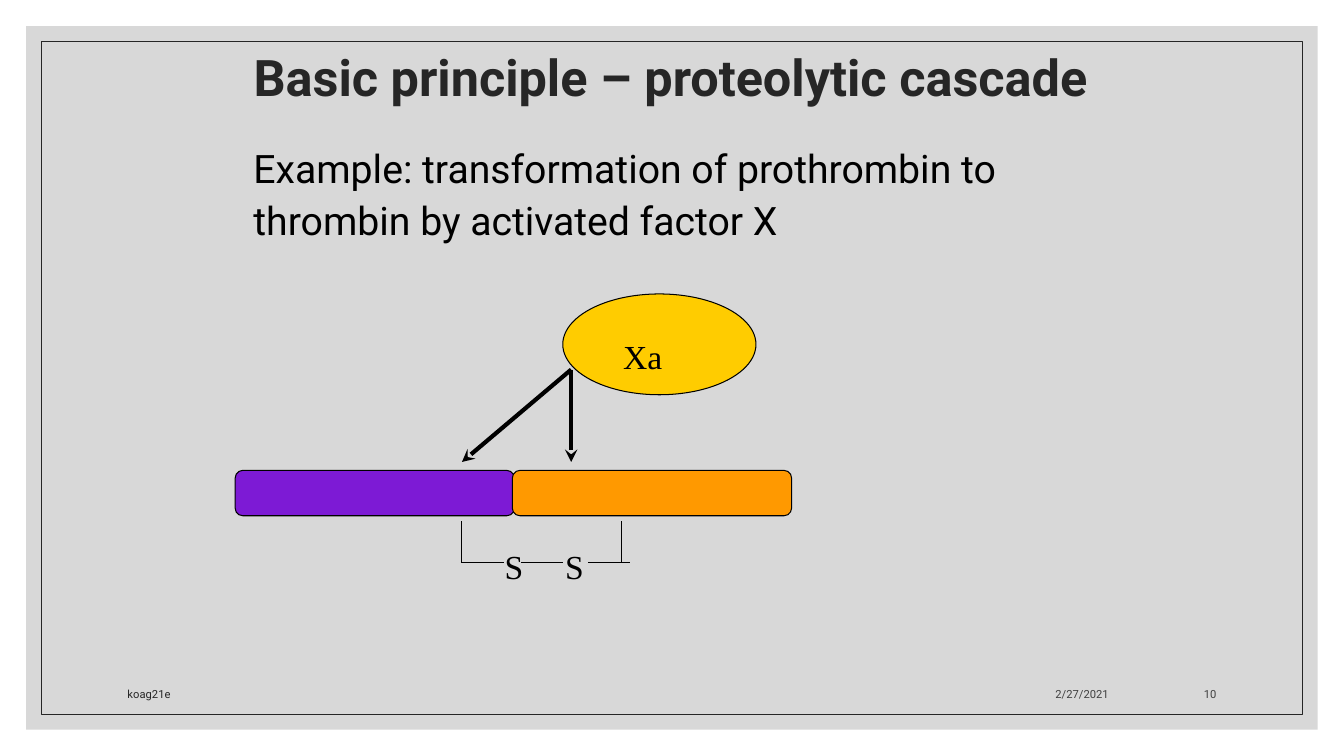
from dataclasses import dataclass

from lxml import etree
from pptx import Presentation
from pptx.dml.color import RGBColor
from pptx.enum.shapes import MSO_CONNECTOR, MSO_SHAPE
from pptx.enum.text import MSO_ANCHOR, PP_ALIGN
from pptx.oxml.ns import qn
from pptx.util import Emu, Inches, Pt

RECTANGLE, ROUNDED, OVAL = MSO_SHAPE.RECTANGLE, MSO_SHAPE.ROUNDED_RECTANGLE, MSO_SHAPE.OVAL
STRAIGHT = MSO_CONNECTOR.STRAIGHT
LEFT, RIGHT = PP_ALIGN.LEFT, PP_ALIGN.RIGHT
TOP, MIDDLE, BOTTOM = MSO_ANCHOR.TOP, MSO_ANCHOR.MIDDLE, MSO_ANCHOR.BOTTOM

COLORS = {
    "backdrop": "BFBFBF",
    "dark": "262626",
    "grey": "404040",
    "black": "000000",
    "purple": "7D1AD5",
    "orange": "FF9900",
    "yellow": "FFCC00",
}
SANS, SERIF = "Roboto", "Times New Roman"

# The slide is a grid of 160 columns and 90 rows, twelve to the inch.
COLUMNS, ROWS = 160, 90
CELL = Inches(1) // 12


@dataclass(frozen=True)
class Box:
    column: float
    row: float
    columns: float
    rows: float

    def lengths(self) -> list[Emu]:
        return [grid(n) for n in (self.column, self.row, self.columns, self.rows)]


@dataclass(frozen=True)
class Figure:
    kind: int
    box: Box
    fill: str | None = None
    line: str | None = None
    width: float = 0.75
    alpha: int = 100


@dataclass(frozen=True)
class Stroke:
    start: tuple[float, float]
    end: tuple[float, float]
    width: float = 0.75
    arrow: bool = False


def grid(cells: float) -> Emu:
    return Emu(round(cells * CELL))


def color(name: str) -> RGBColor:
    return RGBColor.from_string(COLORS[name])


def inset(margin: float) -> Box:
    """Box that keeps the same margin to all four slide edges."""
    return Box(margin, margin, COLUMNS - 2 * margin, ROWS - 2 * margin)


def add_figure(slide, figure: Figure) -> None:
    shape = slide.shapes.add_shape(figure.kind, *figure.box.lengths())
    shape.shadow.inherit = False
    if figure.fill:
        shape.fill.solid()
        shape.fill.fore_color.rgb = color(figure.fill)
        if figure.alpha < 100:
            tint = shape.fill._xPr.find(".//" + qn("a:srgbClr"))
            etree.SubElement(tint, qn("a:alpha"), val=str(figure.alpha * 1000))
    else:
        shape.fill.background()
    if figure.line:
        shape.line.color.rgb = color(figure.line)
        shape.line.width = Pt(figure.width)
    else:
        shape.line.fill.background()


def add_stroke(slide, stroke: Stroke) -> None:
    ends = [grid(n) for n in (*stroke.start, *stroke.end)]
    connector = slide.shapes.add_connector(STRAIGHT, *ends)
    connector.line.color.rgb = color("black")
    connector.line.width = Pt(stroke.width)
    if stroke.arrow:
        etree.SubElement(connector.line._get_or_add_ln(), qn("a:tailEnd"), type="stealth")
    etree.SubElement(connector._element.spPr, qn("a:effectLst"))


def add_text(slide, text: str, box: Box, *, size: float, font: str = SANS,
             ink: str = "black", bold: bool = False, align: int = LEFT,
             anchor: int = TOP, spacing: float = 1.0, before: float = 0) -> None:
    frame = slide.shapes.add_textbox(*box.lengths()).text_frame
    frame.word_wrap = True
    frame.vertical_anchor = anchor
    paragraph = frame.paragraphs[0]
    paragraph.alignment = align
    paragraph.line_spacing = spacing
    paragraph.space_before = Pt(before)
    run = paragraph.add_run()
    run.text = text
    run.font.name = font
    run.font.size = Pt(size)
    run.font.bold = bold
    run.font.color.rgb = color(ink)


def add_frame(slide) -> None:
    add_figure(slide, Figure(RECTANGLE, inset(3.12), fill="backdrop", alpha=60))
    add_figure(slide, Figure(RECTANGLE, inset(4.92), line="dark", width=0.5))


def add_prothrombin(slide) -> None:
    """Two chains, held together by a disulfide bridge."""
    for column, fill in ((28, "purple"), (61, "orange")):
        add_figure(slide, Figure(ROUNDED, Box(column, 56, 33.24, 5.4), fill, "black"))

    bridge_row = 67
    for column in (55, 62, 70):
        add_stroke(slide, Stroke((column, bridge_row), (column + 5, bridge_row)))
    for column in (55, 74):
        add_stroke(slide, Stroke((column, bridge_row), (column, 62)))
    for column in (58.9, 66.1):
        add_text(slide, "S", Box(column, 64.4, 5, 6), size=24, font=SERIF)


def add_factor_xa(slide) -> None:
    """The enzyme, with arrows to the two places it cuts."""
    add_figure(slide, Figure(OVAL, Box(67, 35, 23, 12), "yellow", "black"))
    add_text(slide, "Xa", Box(73, 39.4, 9, 6), size=24, font=SERIF)
    for cut_column in (55, 68):
        add_stroke(slide, Stroke((68, 44), (cut_column, 55), width=3, arrow=True))


def add_footer(slide) -> None:
    for text, column, columns, ink, align in (
        ("koag21e", 14, 76.32, "dark", LEFT),
        ("2/27/2021", 95.28, 37.92, "grey", RIGHT),
        ("10", 135, 11, "grey", RIGHT),
    ):
        add_text(slide, text, Box(column, 79.2, columns, 4.8), size=8, ink=ink,
                 align=align, anchor=BOTTOM)


def main() -> None:
    presentation = Presentation()
    presentation.slide_width = grid(COLUMNS)
    presentation.slide_height = grid(ROWS)
    slide = presentation.slides.add_slide(presentation.slide_layouts[6])

    add_frame(slide)
    add_text(slide, "Basic principle – proteolytic cascade", Box(29, 4, 105, 11),
             size=36, ink="dark", bold=True, anchor=MIDDLE, spacing=0.9)
    add_text(slide, "Example: transformation of prothrombin to thrombin by activated factor X",
             Box(29, 16, 102, 14), size=28, spacing=1.1, before=9)
    add_prothrombin(slide)
    add_factor_xa(slide)
    add_footer(slide)
    presentation.save("out.pptx")


if __name__ == "__main__":
    main()
